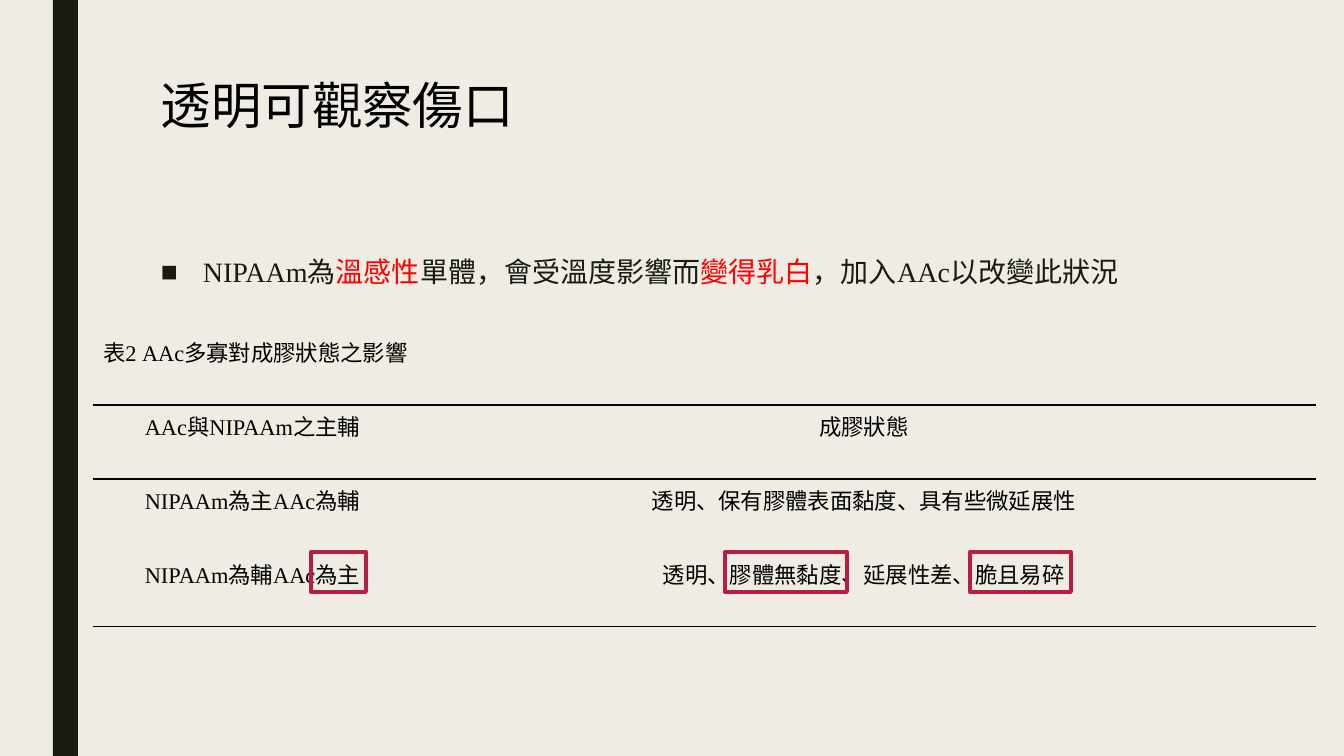
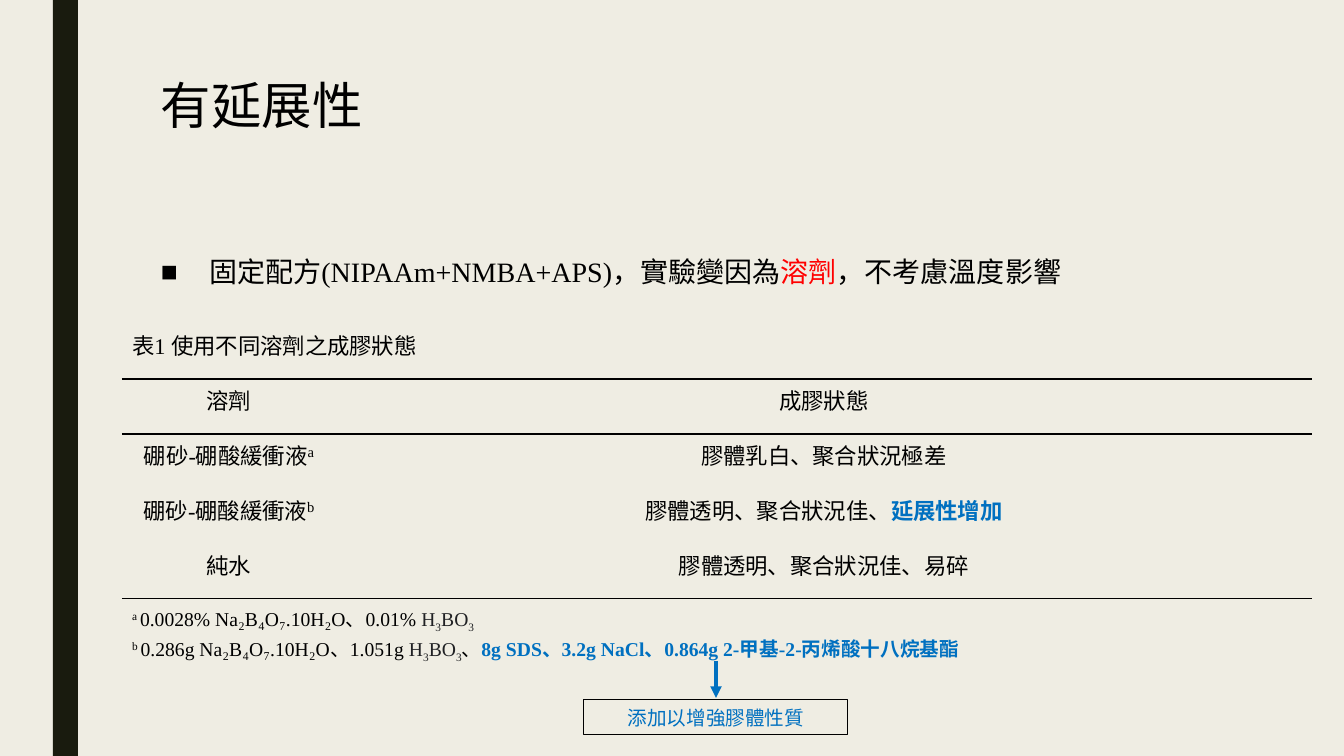
import pptx
import pptx.util
import pptx.dml.color
import pptx.enum.shapes
import pptx.enum.text
import pptx.oxml
import pptx.oxml.ns
from lxml import etree

RGB = pptx.dml.color.RGBColor
ALIGN = pptx.enum.text.PP_ALIGN
ANCHOR = pptx.enum.text.MSO_ANCHOR
SHAPES = pptx.enum.shapes.MSO_SHAPE
qn = pptx.oxml.ns.qn

EMU_PER_PX = 914400 / 100.8
PAGE_SIZE = (1344, 756)

CREAM = RGB(0xEF, 0xED, 0xE3)
OLIVE = RGB(0x19, 0x1B, 0x0E)
BLACK = RGB(0, 0, 0)
RED = RGB(0xFF, 0, 0)
CRIMSON = RGB(0xB7, 0x1E, 0x42)
BLUE = RGB(0x00, 0x70, 0xC0)
GREY = RGB(0x20, 0x21, 0x24)

LATIN = "Times New Roman"
CJK = "Noto Sans CJK TC"

WARNING = {"color": RED}
STRONG = {"color": BLUE, "bold": True}
RAISED = {"baseline": 30}
MARK = {"baseline": 30, "size": 18}
BORIC_ACID = [("H", {"color": GREY}), ("3", {"color": GREY, "baseline": -25}),
              ("BO", {"color": GREY}), ("3", {"color": GREY, "baseline": -25})]


def px(length):
    return pptx.util.Emu(round(length * EMU_PER_PX))


def write(para, spans, size, color=BLACK, align=ALIGN.LEFT):
    """Fill a paragraph; a span is plain text or a (text, style) pair."""
    para.alignment = align
    para.font.size = pptx.util.Pt(size)
    para.font.name = LATIN
    para.font.color.rgb = color
    default = para._p.pPr.find(qn("a:defRPr"))
    etree.SubElement(default, qn("a:ea")).set("typeface", CJK)
    for item in spans:
        text, style = (item, {}) if isinstance(item, str) else item
        span = para.add_run()
        span.text = text
        if "color" in style:
            span.font.color.rgb = style["color"]
        if "bold" in style:
            span.font.bold = style["bold"]
        if "size" in style:
            span.font.size = pptx.util.Pt(style["size"])
        if "baseline" in style:
            span._r.get_or_add_rPr().set("baseline", str(style["baseline"] * 1000))


def add_text_box(page, box):
    shape = page.shapes.add_textbox(*map(px, box))
    shape.text_frame.word_wrap = True
    return shape


def add_base(deck, title):
    """Add a page with the background, side band and title."""
    page = deck.slides.add_slide(deck.slide_layouts[6])
    page.background.fill.solid()
    page.background.fill.fore_color.rgb = CREAM
    band = page.shapes.add_shape(SHAPES.RECTANGLE, px(53), 0, px(25), px(PAGE_SIZE[1]))
    band.shadow.inherit = False
    band.fill.solid()
    band.fill.fore_color.rgb = OLIVE
    band.line.fill.background()
    para = add_text_box(page, (151, 76, 1058, 163)).text_frame.paragraphs[0]
    write(para, [title], 36)
    para.line_spacing = 0.89
    return page


def add_bullet(page, spans, color):
    para = add_text_box(page, (151, 252, 1058, 395)).text_frame.paragraphs[0]
    properties = para._p.get_or_add_pPr()
    properties.set("marL", str(px(42)))
    properties.set("indent", str(px(-42)))
    etree.SubElement(properties, qn("a:buFont")).set("typeface", "Arial")
    etree.SubElement(properties, qn("a:buChar")).set("char", "■")
    write(para, spans, 20, color)
    para.line_spacing = 0.94
    para.space_before = pptx.util.Pt(10)
    para.space_after = pptx.util.Pt(2)


def set_borders(cell, ruled_top, ruled_bottom):
    properties = cell._tc.get_or_add_tcPr()
    sides = {"lnL": False, "lnR": False, "lnT": ruled_top, "lnB": ruled_bottom}
    for index, (side, ruled) in enumerate(sides.items()):
        border = etree.Element(qn("a:" + side))
        properties.insert(index, border)
        if ruled:
            border.set("w", str(pptx.util.Pt(1)))
            fill = etree.SubElement(border, qn("a:solidFill"))
            etree.SubElement(fill, qn("a:srgbClr")).set("val", str(BLACK))
        else:
            etree.SubElement(border, qn("a:noFill"))


def add_ruled_table(page, left, top, widths, heights, caption, rows, ruled_rows):
    """Add a table under a merged caption row, with a line below each ruled row."""
    table = page.shapes.add_table(len(heights), len(widths), px(left), px(top),
                                  px(sum(widths)), px(sum(heights))).table
    table.first_row = table.horz_banding = False
    for column, width in zip(table.columns, widths):
        column.width = px(width)
    for index, (row, height) in enumerate(zip(table.rows, heights)):
        row.height = px(height)
        for cell in row.cells:
            cell.fill.background()
            set_borders(cell, index - 1 in ruled_rows, index in ruled_rows)
    table.cell(0, 0).merge(table.cell(0, len(widths) - 1))
    write(table.cell(0, 0).text_frame.paragraphs[0], [caption], 16)
    for index, texts in enumerate(rows, 1):
        for column, spans in enumerate(texts):
            para = table.cell(index, column).text_frame.paragraphs[0]
            write(para, spans, 16, align=ALIGN.CENTER)
    return table


def add_footnotes(table, row, notes):
    cell = table.cell(row, 0)
    cell.merge(table.cell(row, len(table.columns) - 1))
    frame = cell.text_frame
    for index, spans in enumerate(notes):
        write(frame.add_paragraph() if index else frame.paragraphs[0], spans, 14)


def add_highlight(page, box):
    frame = page.shapes.add_shape(SHAPES.FLOWCHART_PROCESS, *map(px, box))
    frame.shadow.inherit = False
    frame.fill.background()
    frame.line.color.rgb = CRIMSON
    frame.line.width = pptx.util.Pt(2.75)


def add_callout(page, box, text, arrow_x, arrow_top):
    """Add a framed label with an arrow pointing down to it."""
    left, top, width, height = box
    arrow = page.shapes.add_connector(pptx.enum.shapes.MSO_CONNECTOR.STRAIGHT,
                                      px(arrow_x), px(arrow_top), px(arrow_x), px(top - 2))
    arrow.line.color.rgb = BLUE
    arrow.line.width = pptx.util.Pt(2.75)
    etree.SubElement(arrow.line._get_or_add_ln(), qn("a:tailEnd")).set("type", "triangle")
    etree.SubElement(arrow._element.spPr, qn("a:effectLst"))
    label = add_text_box(page, box)
    label.line.color.rgb = BLACK
    label.line.width = pptx.util.Pt(0.75)
    frame = label.text_frame
    frame.margin_top = frame.margin_bottom = px(3)
    frame.vertical_anchor = ANCHOR.MIDDLE
    write(frame.paragraphs[0], [text], 14, BLUE, ALIGN.CENTER)


def add_transparency_page(deck):
    page = add_base(deck, "透明可觀察傷口")
    add_bullet(page, ["NIPAAm為", ("溫感性", WARNING), "單體，會受溫度影響而",
                      ("變得乳白", WARNING), "，加入AAc以改變此狀況"], OLIVE)
    add_ruled_table(page, 93, 331, (319, 904), [74] * 5, "表2 AAc多寡對成膠狀態之影響", [
        (["AAc與NIPAAm之主輔"], ["成膠狀態"]),
        (["NIPAAm為主AAc為輔"], ["透明、保有膠體表面黏度、具有些微延展性"]),
        (["NIPAAm為輔AAc為主"], ["透明、膠體無黏度、延展性差、脆且易碎"]),
    ], {0, 1, 3})
    for left, width in ((311, 55), (725, 122), (970, 101)):
        add_highlight(page, (left, 552, width, 40))


def add_extension_page(deck):
    page = add_base(deck, "有延展性")
    add_bullet(page, [" 固定配方(NIPAAm+NMBA+APS)，實驗變因為", ("溶劑", WARNING),
                      "，不考慮溫度影響"], BLACK)
    table = add_ruled_table(page, 122, 324, (214, 976), [55] * 5 + [81],
                            "表1 使用不同溶劑之成膠狀態", [
        (["溶劑"], ["成膠狀態"]),
        (["硼砂-硼酸緩衝液", ("a", MARK)], ["膠體乳白、聚合狀況極差"]),
        (["硼砂-硼酸緩衝液", ("b", MARK)],
         ["膠體透明、聚合狀況佳、", ("延展性增加", STRONG)]),
        (["純水"], ["膠體透明、聚合狀況佳、易碎"]),
    ], {0, 1, 4})
    add_footnotes(table, 5, [
        [("a ", RAISED), "0.0028% Na₂B₄O₇.10H₂O、0.01% ", *BORIC_ACID],
        [("b ", RAISED), "0.286g Na₂B₄O₇.10H₂O、1.051g ", *BORIC_ACID, "、",
         ("8g SDS、3.2g NaCl、0.864g 2-甲基-2-丙烯酸十八烷基酯", STRONG)],
    ])
    add_callout(page, (584, 700, 264, 35), "添加以增強膠體性質", 716, 661)


def main():
    deck = pptx.Presentation()
    deck.slide_width, deck.slide_height = map(px, PAGE_SIZE)
    add_transparency_page(deck)
    add_extension_page(deck)
    deck.save("out.pptx")


if __name__ == "__main__":
    main()
